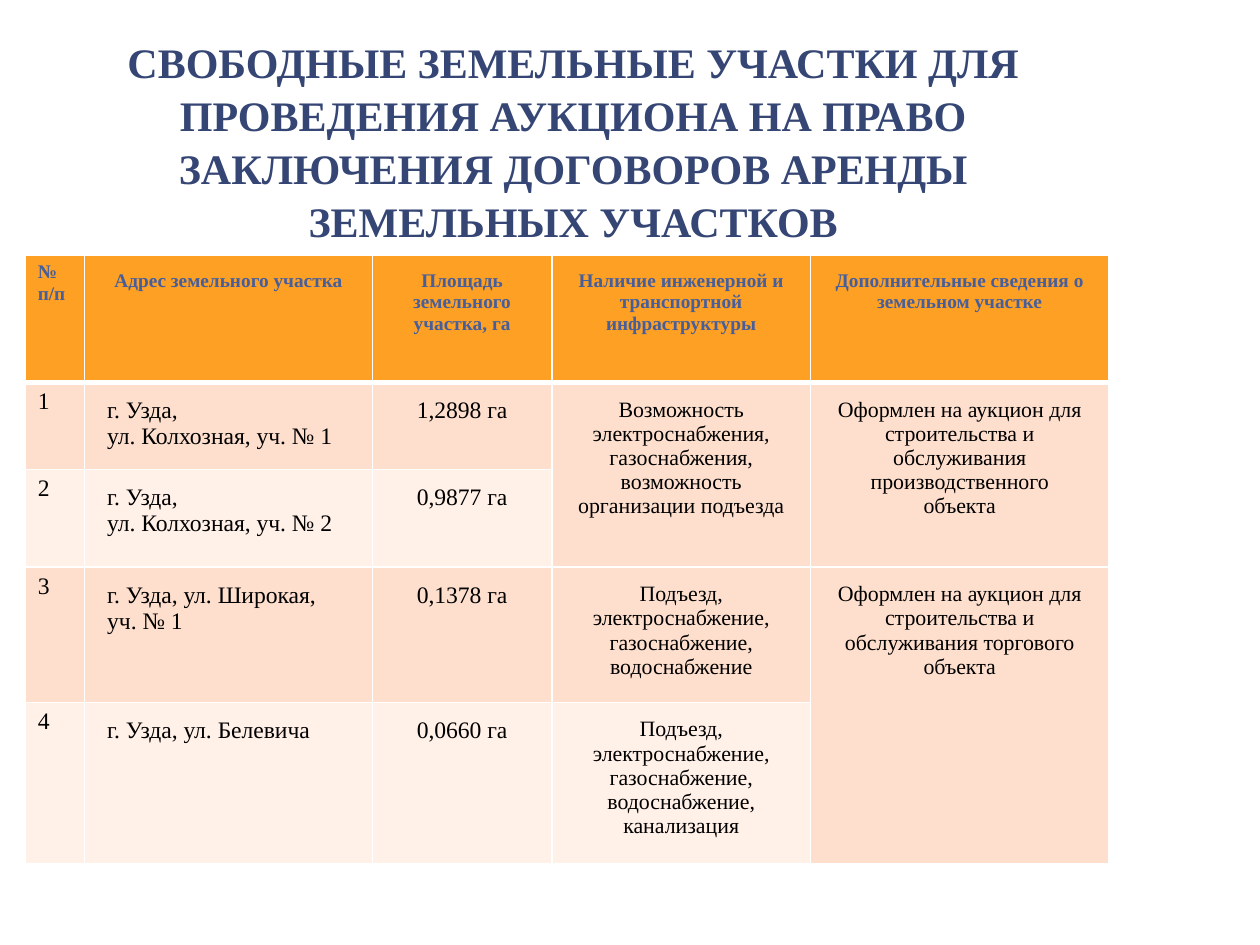
from copy import deepcopy
from dataclasses import dataclass
from itertools import product

from lxml import etree
from pptx import Presentation
from pptx import util as u
from pptx.dml.color import RGBColor
from pptx.enum import text
from pptx.oxml.ns import qn


@dataclass(frozen=True)
class Theme:
    font: str = "Times New Roman"
    title: str = "354675"
    head: str = "465E9C"
    ink: str = "000000"
    line: str = "FFFFFF"
    top: str = "FDA023"
    odd: str = "FEDFCD"
    even: str = "FFF0E8"
    big: float = 24
    mid: float = 13.5
    body: float = 12.5
    small: float = 11


T = Theme()
MID = text.PP_ALIGN.CENTER
LEFT = text.PP_ALIGN.LEFT
COLS = (47, 228, 142, 205, 236)
ROWS = (102, 68, 78, 104, 124)
TITLE = ("СВОБОДНЫЕ ЗЕМЕЛЬНЫЕ УЧАСТКИ ДЛЯ ПРОВЕДЕНИЯ АУКЦИОНА НА ПРАВО "
         "ЗАКЛЮЧЕНИЯ ДОГОВОРОВ АРЕНДЫ ЗЕМЕЛЬНЫХ УЧАСТКОВ")
PLOTS = (
    ("№ п/п", "Адрес земельного участка", "Площадь земельного участка, га",
     "Наличие инженерной и транспортной инфраструктуры",
     "Дополнительные сведения о земельном участке"),
    ("1", "г. Узда,\nул. Колхозная, уч. № 1", "1,2898 га",
     "Возможность электроснабжения, газоснабжения, возможность организации подъезда",
     "Оформлен на аукцион для строительства и обслуживания производственного объекта"),
    ("2", "г. Узда,\nул. Колхозная, уч. № 2", "0,9877 га", None, None),
    ("3", "г. Узда, ул. Широкая, уч. № 1", "0,1378 га",
     "Подъезд, электроснабжение,\vгазоснабжение,\vводоснабжение",
     "Оформлен на аукцион для строительства и обслуживания торгового объекта"),
    ("4", "г. Узда, ул. Белевича", "0,0660 га",
     "Подъезд, электроснабжение,\vгазоснабжение,\vводоснабжение,\vканализация", None),
)
SPANS = ((1, 3), (1, 4), (3, 4))


def put(frame, words, size, color, bold=False, align=LEFT, gap=None):
    frame.word_wrap = True
    for i, part in enumerate(words.split("\n")):
        para = frame.add_paragraph() if i else frame.paragraphs[0]
        para.text = part
        para.alignment = align
        para.line_spacing = gap
        for run in para.runs:
            font = run.font
            font.name, font.size, font.bold = T.font, u.Pt(size), bold
            font.color.rgb = RGBColor.from_string(color)
        for brk in para._p.findall(qn("a:br")):
            brk.append(deepcopy(para.runs[0]._r.rPr))


def edge(cell, foot):
    props = cell._tc.get_or_add_tcPr()
    for i, side in enumerate("LRTB"):
        line = etree.Element(qn(f"a:ln{side}"), w=str(u.Pt(foot if side == "B" else 1)))
        fill = etree.SubElement(line, qn("a:solidFill"))
        etree.SubElement(fill, qn("a:srgbClr"), val=T.line)
        props.insert(i, line)


def title(slide, box):
    frame = slide.shapes.add_textbox(*box).text_frame
    frame.margin_left = frame.margin_right = u.Inches(0.05)
    frame.margin_top = frame.margin_bottom = 0
    frame.vertical_anchor = text.MSO_ANCHOR.BOTTOM
    put(frame, TITLE, T.big, T.title, bold=True, align=MID, gap=1.05)


def paint(cell, row, col, words):
    if col:
        cell.margin_left = cell.margin_right = u.Inches(0.18)
        cell.margin_top = cell.margin_bottom = u.Inches(0.12)
    cell.fill.solid()
    shade = T.top if row == 0 else T.odd if row % 2 else T.even
    cell.fill.fore_color.rgb = RGBColor.from_string(shade)
    edge(cell, 1 if row else 3)
    if words:
        size = T.small if row == 0 else T.body if col > 2 else T.mid
        left = col == 0 or (row and col == 1)
        put(cell.text_frame, words, size, T.ink if row else T.head,
            bold=row == 0, align=LEFT if left else MID)


def plots(slide, box):
    grid = slide.shapes.add_table(len(ROWS), len(COLS), *box).table
    grid.horz_banding = False
    for col, share in zip(grid.columns, COLS):
        col.width = int(box[2] * share / sum(COLS))
    for row, share in zip(grid.rows, ROWS):
        row.height = int(box[3] * share / sum(ROWS))
    for row, col in SPANS:
        grid.cell(row, col).merge(grid.cell(row + 1, col))
    for row, col in product(range(len(ROWS)), range(len(COLS))):
        paint(grid.cell(row, col), row, col, PLOTS[row][col])


def main():
    deck = Presentation()
    deck.slide_width, deck.slide_height = wide, high = u.Inches(10), u.Inches(7.5)
    slide = deck.slides.add_slide(deck.slide_layouts[6])

    def area(x, y, w, h):
        return int(wide * x), int(high * y), int(wide * w), int(high * h)

    title(slide, area(0.06, 0.04, 0.79, 0.22))
    plots(slide, area(0.02, 0.27, 0.86, 0.63))
    deck.save("out.pptx")


if __name__ == "__main__":
    main()
